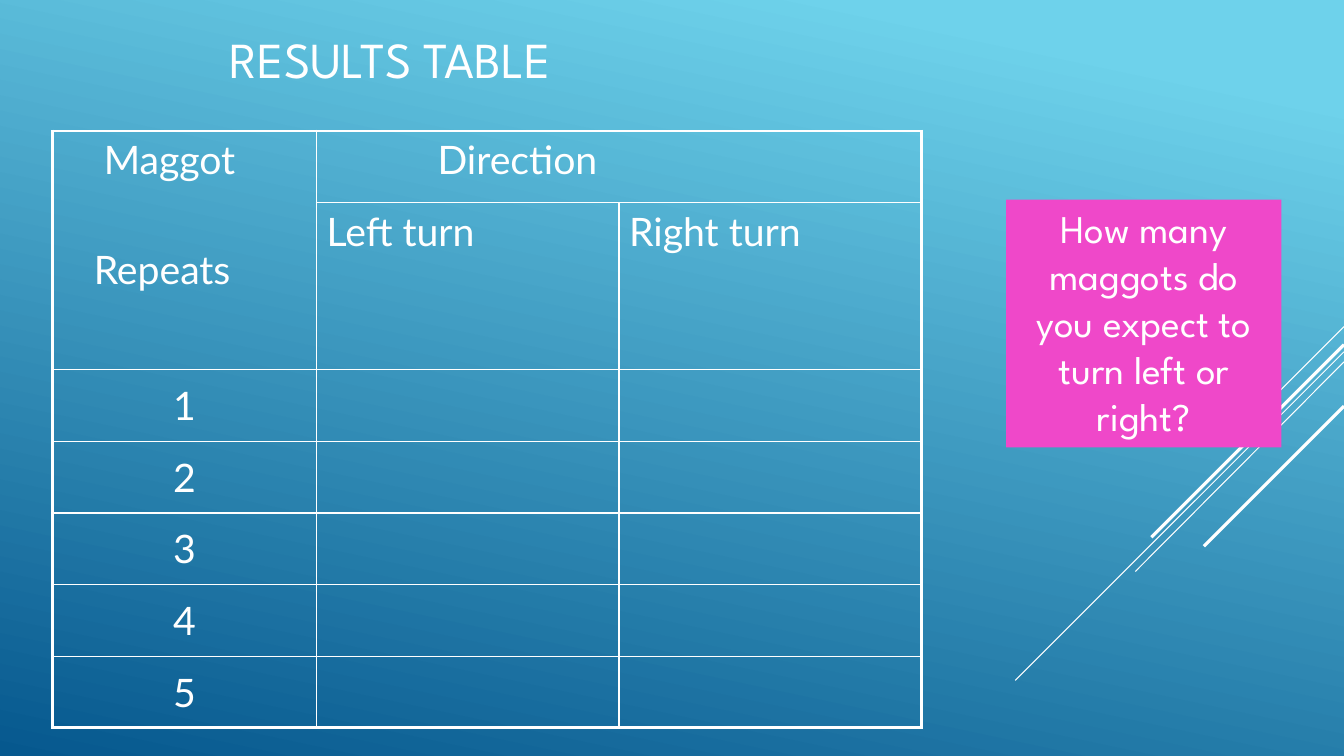
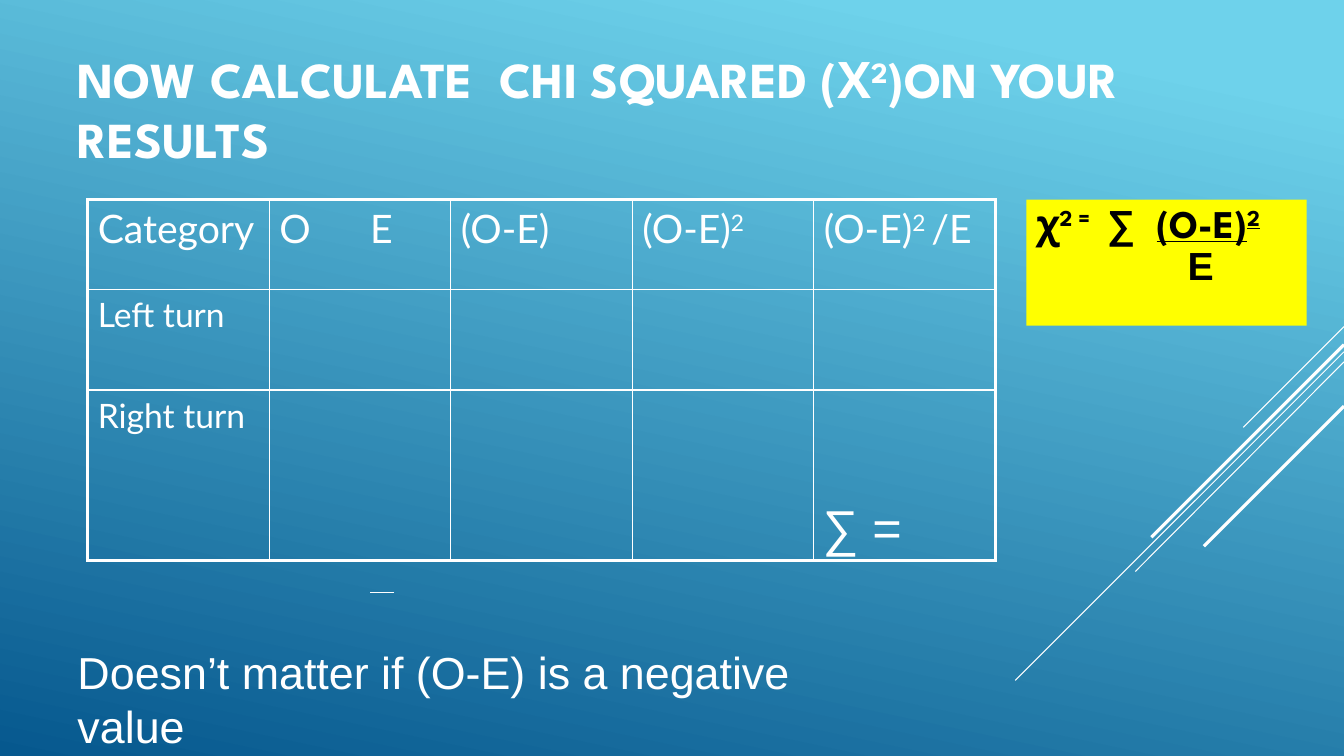
from lxml.etree import SubElement
from pptx import Presentation
from pptx.dml.color import RGBColor
from pptx.enum.shapes import MSO_CONNECTOR, MSO_SHAPE
from pptx.enum.text import MSO_ANCHOR, MSO_AUTO_SIZE, PP_ALIGN
from pptx.oxml.ns import qn
from pptx.util import Inches, Pt

COLORS = {
    "sky": "6ED2EB",
    "deep": "06588E",
    "white": "FFFFFF",
    "black": "000000",
    "pink": "EF48C9",
    "yellow": "FFFF00",
}
HEADING_FONT, TABLE_FONT, PLAIN_FONT, GREEK_FONT = (
    "League Spartan", "Lato", "Arial", "Open Sans")
OUTER_BORDER, INNER_BORDER = 2.25, 1
TITLE_ONLY = 5
# start x, start y, end x, end y, weight
DIAGONALS = [
    (13.33, 3.24, 12.33, 4.24, 0.75),
    (13.33, 3.49, 10.07, 6.75, 0.75),
    (13.33, 3.59, 11.26, 5.67, 0.75),
    (13.33, 3.42, 11.42, 5.33, 2.25),
    (13.33, 4.03, 11.94, 5.42, 2.25),
]


def rgb(name):
    return RGBColor.from_string(COLORS[name])


def span(text, **style):
    """Pair a text with the style that differs from its paragraph."""
    return text, style


def para(*spans, **layout):
    """Pair spans with paragraph layout: align, before, spacing, indent, tab."""
    return [item if isinstance(item, tuple) else span(item) for item in spans], layout


def set_border(cell, side, weight):
    line = SubElement(cell._tc.get_or_add_tcPr(), qn(f"a:ln{side}"), w=str(Pt(weight)))
    fill = SubElement(line, qn("a:solidFill"))
    SubElement(fill, qn("a:srgbClr"), val=COLORS["white"])


class Designer:
    def __init__(self):
        self.deck = Presentation()
        self.deck.slide_width = Inches(13.33)
        self.deck.slide_height = Inches(7.5)
        self.layout = self.deck.slide_layouts[TITLE_ONLY]
        self.page = None
        fill = self.deck.slide_master.background.fill
        fill.gradient()
        fill.gradient_angle = 360 - 102
        for stop, color, position in zip(fill.gradient_stops, ("sky", "deep"), (0.1, 1)):
            stop.color.rgb = rgb(color)
            stop.position = position

    def add_page(self):
        first = self.page is None
        self.page = self.deck.slides.add_slide(self.layout)
        if first:
            self.share_diagonals()

    def share_diagonals(self):
        """Draw the diagonal lines and move them to the layout."""
        for number, diagonal in enumerate(DIAGONALS, start=101):
            line = self.line(*diagonal)
            line.element.nvCxnSpPr.cNvPr.set("id", str(number))
            self.layout.shapes.element.append(line.element)

    def line(self, x1, y1, x2, y2, weight):
        line = self.page.shapes.add_connector(
            MSO_CONNECTOR.STRAIGHT, Inches(x1), Inches(y1), Inches(x2), Inches(y2))
        line.line.color.rgb = rgb("white")
        line.line.width = Pt(weight)
        SubElement(line.element.spPr, qn("a:effectLst"))
        return line

    def add_paras(self, frame, paras, **base):
        for index, (spans, layout) in enumerate(paras):
            target = frame.paragraphs[0] if index == 0 else frame.add_paragraph()
            target.alignment = layout.get("align", PP_ALIGN.LEFT)
            target.space_before = Pt(layout.get("before", 0))
            target.line_spacing = layout.get("spacing", 1.0)
            properties = target._p.get_or_add_pPr()
            if "indent" in layout:
                properties.set("marL", str(Inches(layout["indent"])))
                properties.set("indent", "0")
            if "tab" in layout:
                tabs = SubElement(properties, qn("a:tabLst"))
                SubElement(tabs, qn("a:tab"), pos=str(Inches(layout["tab"])), algn="l")
            for text, changes in spans:
                self.add_span(target, text, **{**base, **changes})

    def add_span(self, target, text, font, size, color="white",
                 bold=False, underline=False, raised=False):
        run = target.add_run()
        run.text = text
        run.font.name = font
        run.font.size = Pt(size)
        run.font.color.rgb = rgb(color)
        run.font.bold = bold
        run.font.underline = underline
        if raised:
            run._r.get_or_add_rPr().set("baseline", "30000")

    def title(self, left, top, width, height, *spans, bold=False):
        box = self.page.shapes.title
        box.left, box.top = Inches(left), Inches(top)
        box.width, box.height = Inches(width), Inches(height)
        frame = box.text_frame
        frame.auto_size = MSO_AUTO_SIZE.NONE
        frame.vertical_anchor = MSO_ANCHOR.MIDDLE
        self.add_paras(frame, [para(*spans)], font=HEADING_FONT, size=36, bold=bold)

    def text(self, left, top, width, height, *paras, **style):
        box = self.page.shapes.add_textbox(
            Inches(left), Inches(top), Inches(width), Inches(height))
        box.text_frame.word_wrap = True
        self.add_paras(box.text_frame, paras, **style)

    def panel(self, left, top, width, height, fill, *paras, **style):
        box = self.page.shapes.add_shape(
            MSO_SHAPE.RECTANGLE, Inches(left), Inches(top), Inches(width), Inches(height))
        box.shadow.inherit = False
        box.fill.solid()
        box.fill.fore_color.rgb = rgb(fill)
        box.line.fill.background()
        box.text_frame.word_wrap = True
        box.text_frame.vertical_anchor = MSO_ANCHOR.TOP
        self.add_paras(box.text_frame, paras, **style)

    def table(self, left, top, columns, rows, merges=()):
        frame = self.page.shapes.add_table(
            len(rows), len(columns), Inches(left), Inches(top),
            Inches(sum(columns)), Inches(sum(rows)))
        table = frame.table
        table.first_row = table.horz_banding = False
        for column, width in zip(table.columns, columns):
            column.width = Inches(width)
        for row, height in zip(table.rows, rows):
            row.height = Inches(height)
        for start, end in merges:
            table.cell(*start).merge(table.cell(*end))
        for y in range(len(rows)):
            for x in range(len(columns)):
                cell = table.cell(y, x)
                origin = cell.is_merge_origin
                last_x = x + (cell.span_width if origin else 1)
                last_y = y + (cell.span_height if origin else 1)
                edges = {"L": x == 0, "R": last_x == len(columns),
                         "T": y == 0, "B": last_y == len(rows)}
                for side, outer in edges.items():
                    set_border(cell, side, OUTER_BORDER if outer else INNER_BORDER)
                cell.fill.background()
        return table

    def cell(self, table, y, x, *paras, size=28, anchor=MSO_ANCHOR.TOP):
        cell = table.cell(y, x)
        cell.vertical_anchor = anchor
        self.add_paras(cell.text_frame, paras, font=TABLE_FONT, size=size)


def results_page(designer):
    designer.add_page()
    designer.title(2.18, 0, 9, 1.15, "RESULTS TABLE")
    table = designer.table(
        0.52, 1.3, [2.62, 3, 3], [0.71, 1.66] + [0.71] * 5,
        merges=[((0, 0), (1, 0)), ((0, 1), (0, 2))])
    designer.cell(table, 0, 0, para("Maggot", indent=0.41),
                  para("Repeats", indent=0.31, before=45))
    designer.cell(table, 0, 1, para("Direction", indent=1.1))
    designer.cell(table, 1, 1, para("Left turn"))
    designer.cell(table, 1, 2, para("Right turn"))
    for repeat in range(1, 6):
        designer.cell(table, repeat + 1, 0, para(str(repeat), align=PP_ALIGN.CENTER),
                      anchor=MSO_ANCHOR.MIDDLE)
    designer.panel(
        9.98, 1.98, 2.73, 2.46, "pink",
        para("How many maggots do you expect to turn left or right?",
             align=PP_ALIGN.CENTER),
        font=HEADING_FONT, size=28)


def chi_squared_page(designer):
    squared = span("2", raised=True)
    designer.add_page()
    designer.title(
        0.67, 0.32, 12, 1.51, "NOW CALCULATE  CHI SQUARED (",
        span("Χ", font=GREEK_FONT), squared, ")ON YOUR RESULTS", bold=True)
    table = designer.table(0.87, 1.98, [1.8] * 5, [0.89, 1, 1.69])
    headings = [
        para("Category"),
        para("O\tE", tab=0.9),
        para("(O-E)"),
        para("(O-E)", squared),
        para("(O-E)", span("2 ", raised=True), "/E"),
    ]
    for x, heading in enumerate(headings):
        designer.cell(table, 0, x, heading)
    for y, category in enumerate(("Left turn", "Right turn"), start=1):
        designer.cell(table, y, 0, para(category), size=24)
    designer.text(0.67, 6.35, 8.25, 1.15,
                  para("Doesn’t matter if (O-E) is a negative value"),
                  font=PLAIN_FONT, size=32)
    designer.line(3.91, 5.88, 3.67, 5.88, 0.75)
    designer.text(8.06, 4.87, 2.78, 0.7, para("∑ ="), font=PLAIN_FONT, size=36)
    designer.panel(
        10.18, 1.98, 2.78, 1.25, "yellow",
        para(span("χ", font=GREEK_FONT), span("2 = ", raised=True),
             span(" ∑  ", font=PLAIN_FONT), span("(O-E)", underline=True),
             span("2", underline=True, raised=True), spacing=0.9),
        para(span("E", font=PLAIN_FONT), spacing=0.9, indent=1.5),
        font=HEADING_FONT, size=28, color="black", bold=True)


def main():
    designer = Designer()
    results_page(designer)
    chi_squared_page(designer)
    designer.deck.save("out.pptx")


if __name__ == "__main__":
    main()
